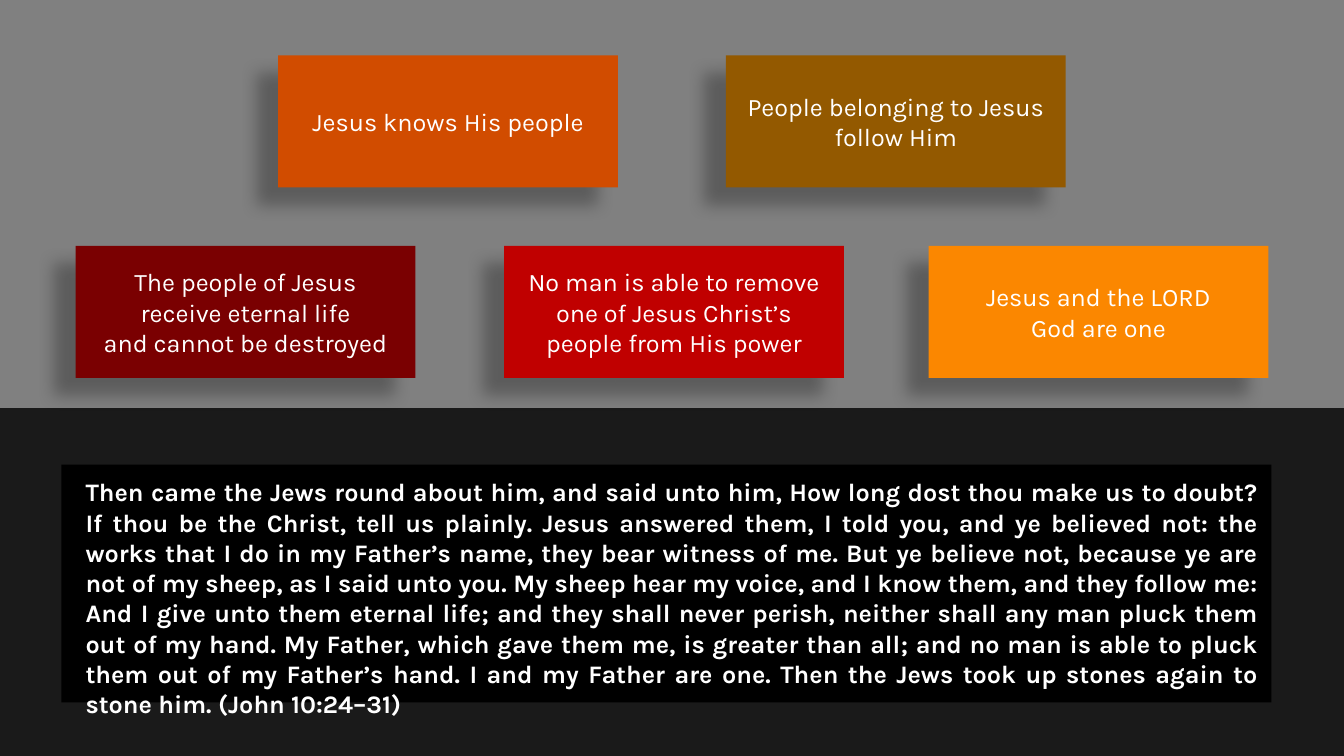
import pptx
import pptx.util
import pptx.dml.color
import pptx.enum.shapes
import pptx.enum.text
import pptx.oxml
import pptx.oxml.ns
from pptx.util import Inches

# Content: each row has a top edge and its points (left edge, fill, lines)
POINT_ROWS = [
    (0.55, [
        (2.76, "orange", ["Jesus knows His people"]),
        (7.2, "brown", ["People belonging to Jesus follow Him"]),
    ]),
    (2.44, [
        (0.75, "maroon", ["The people of Jesus", "receive eternal life",
                          "and cannot be destroyed"]),
        (5, "red", ["No man is able to remove", "one of Jesus Christ’s",
                    "people from His power"]),
        (9.21, "amber", ["Jesus and the LORD", "God are one"]),
    ]),
]
PASSAGE = (
    "Then came the Jews round about him, and said unto him, How long dost thou "
    "make us to doubt? If thou be the Christ, tell us plainly. Jesus answered "
    "them, I told you, and ye believed not: the works that I do in my Father’s "
    "name, they bear witness of me. But ye believe not, because ye are not of my "
    "sheep, as I said unto you. My sheep hear my voice, and I know them, and they "
    "follow me: And I give unto them eternal life; and they shall never perish, "
    "neither shall any man pluck them out of my hand. My Father, which gave them "
    "me, is greater than all; and no man is able to pluck them out of my Father’s "
    "hand. I and my Father are one. Then the Jews took up stones again to stone "
    "him. (John 10:24–31)"
)

THEME = {
    "font": "Karla", "size": 18, "text": "FFFFFF",
    "upper": "808080", "lower": "1A1A1A", "panel": "000000",
    "orange": "D14C00", "brown": "935900",
    "maroon": "7A0001", "red": "C00000", "amber": "FB8700",
}
SHADOW = {"color": "000000", "opacity": 28, "blur": 11.8, "distance": 19.7, "angle": 141}

# Layout
SLIDE_W, SLIDE_H = 13.33, 7.5
SPLIT = 4.05
POINT_W, POINT_H = 3.37, 1.31
PANEL = (0.61, 4.61, 12, 2.36)
PASSAGE_BOX = (0.75, 4.68, 11.83, 2.22)


def color(name):
    return pptx.dml.color.RGBColor.from_string(THEME[name])


def add_block(slide, box, fill):
    block = slide.shapes.add_shape(
        pptx.enum.shapes.MSO_SHAPE.RECTANGLE, *map(Inches, box))
    block.shadow.inherit = False
    block.fill.solid()
    block.fill.fore_color.rgb = color(fill)
    block.line.fill.background()
    return block


def write(frame, lines, align, bold=False):
    frame.word_wrap = True
    for i, line in enumerate(lines):
        paragraph = frame.add_paragraph() if i else frame.paragraphs[0]
        paragraph.text = line
        paragraph.alignment = align
        font = paragraph.font
        font.name = THEME["font"]
        font.size = pptx.util.Pt(THEME["size"])
        font.bold = bold
        font.color.rgb = color("text")


def cast_shadow(block):
    effects = block._element.spPr.find(pptx.oxml.ns.qn("a:effectLst"))
    effects.append(pptx.oxml.parse_xml(
        f'<a:outerShdw {pptx.oxml.ns.nsdecls("a")} '
        f'blurRad="{pptx.util.Pt(SHADOW["blur"])}" '
        f'dist="{pptx.util.Pt(SHADOW["distance"])}" '
        f'dir="{SHADOW["angle"] * 60000}" algn="ctr" rotWithShape="0">'
        f'<a:srgbClr val="{SHADOW["color"]}">'
        f'<a:alpha val="{SHADOW["opacity"] * 1000}"/></a:srgbClr></a:outerShdw>'))


def main():
    prs = pptx.Presentation()
    prs.slide_width, prs.slide_height = Inches(SLIDE_W), Inches(SLIDE_H)
    slide = prs.slides.add_slide(prs.slide_layouts[6])
    align = pptx.enum.text.PP_ALIGN

    # Two-tone backdrop
    slide.background.fill.solid()
    slide.background.fill.fore_color.rgb = color("upper")
    add_block(slide, (0, SPLIT, SLIDE_W, SLIDE_H - SPLIT), "lower")

    # Bible passage on its panel
    add_block(slide, PANEL, "panel")
    passage = slide.shapes.add_textbox(*map(Inches, PASSAGE_BOX)).text_frame
    write(passage, [PASSAGE], align.JUSTIFY, bold=True)
    passage.auto_size = pptx.enum.text.MSO_AUTO_SIZE.SHAPE_TO_FIT_TEXT

    # Points drawn from the passage
    for top, points in POINT_ROWS:
        for left, fill, lines in points:
            point = add_block(slide, (left, top, POINT_W, POINT_H), fill)
            cast_shadow(point)
            point.text_frame.vertical_anchor = pptx.enum.text.MSO_ANCHOR.MIDDLE
            write(point.text_frame, lines, align.CENTER)

    prs.save("out.pptx")


if __name__ == "__main__":
    main()
